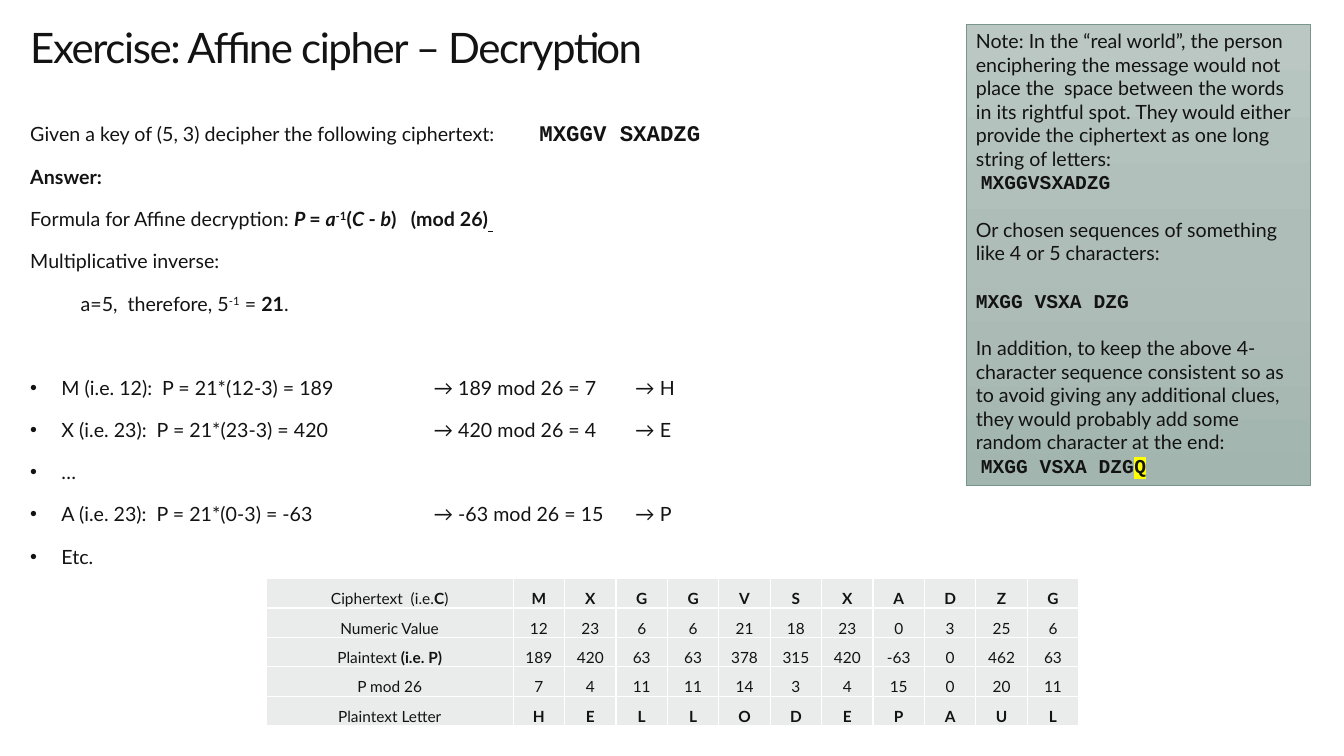
from copy import deepcopy
from dataclasses import dataclass

from pptx import Presentation
from pptx.dml.color import RGBColor
from pptx.enum.shapes import MSO_SHAPE
from pptx.enum.text import MSO_ANCHOR as Anchor, MSO_AUTO_SIZE as AutoSize, PP_ALIGN as Align
from pptx.oxml.ns import qn
from pptx.oxml.xmlchemy import OxmlElement as make_element
from pptx.util import Inches, Pt

INK, WHITE, CELL_FILL = "131313", "FFFFFF", "EAECEB"
SANS, MONO = "Lato", "Courier New"


@dataclass(frozen=True)
class Span:
    text: str
    bold: bool = False
    italic: bool = False
    underline: bool = False
    raised: bool = False
    font: str = SANS
    size: float = 14
    highlight: str = ""


@dataclass(frozen=True)
class Para:
    spans: tuple[Span, ...]
    before: float = 0
    tabs: tuple[float, ...] = ()
    bullet: bool = False


def colour(value: str) -> RGBColor:
    return RGBColor.from_string(value)


def add_child(parent, tag: str, **attributes):
    child = make_element(tag)
    for name, value in attributes.items():
        child.set(name, str(value))
    parent.append(child)
    return child


def write_span(para, span: Span) -> None:
    run = para.add_run()
    run.text = span.text
    font = run.font
    font.name, font.size, font.bold, font.italic = span.font, Pt(span.size), span.bold, span.italic
    font.underline = span.underline
    font.color.rgb = colour(INK)
    properties = run._r.get_or_add_rPr()
    if span.raised:
        properties.set("baseline", "30000")
    if span.highlight:
        mark = make_element("a:highlight")
        add_child(mark, "a:srgbClr", val=span.highlight)
        properties.find(qn("a:solidFill")).addnext(mark)


def write_paras(frame, paras: list[Para], line_spacing: float = 1.0) -> None:
    for index, item in enumerate(paras):
        para = frame.paragraphs[0] if index == 0 else frame.add_paragraph()
        para.alignment = Align.LEFT
        para.line_spacing = line_spacing
        para.space_before, para.space_after = Pt(item.before), Pt(0)
        properties = para._p.get_or_add_pPr()
        hang = Inches(0.31) if item.bullet else 0
        properties.set("marL", str(hang))
        properties.set("indent", str(-hang))
        if item.bullet:
            add_child(properties, "a:buFont", typeface="Arial")
            add_child(properties, "a:buChar", char="•")
        else:
            add_child(properties, "a:buNone")
        if item.tabs:
            stops = add_child(properties, "a:tabLst")
            for stop in item.tabs:
                add_child(stops, "a:tab", pos=Inches(stop), algn="l")
        for span in item.spans:
            write_span(para, span)


def place(shape, left: float, top: float, width: float, height: float) -> None:
    shape.left, shape.top = Inches(left), Inches(top)
    shape.width, shape.height = Inches(width), Inches(height)


def format_cell(cell, spans: tuple[Span, ...]) -> None:
    cell.margin_left = cell.margin_right = cell.margin_top = Inches(0.01)
    cell.margin_bottom = 0
    cell.vertical_anchor = Anchor.BOTTOM
    properties = cell._tc.get_or_add_tcPr()
    for side in ("L", "R", "T", "B"):
        border = add_child(properties, f"a:ln{side}", w=Pt(1))
        add_child(add_child(border, "a:solidFill"), "a:srgbClr", val=WHITE)
    cell.fill.solid()
    cell.fill.fore_color.rgb = colour(CELL_FILL)
    para = cell.text_frame.paragraphs[0]
    para.alignment = Align.CENTER
    for span in spans:
        write_span(para, span)


def add_title(page) -> None:
    title = page.shapes.title
    place(title, 0.2, 0.24, 11.85, 0.68)
    frame = title.text_frame
    frame.vertical_anchor, frame.auto_size = Anchor.TOP, AutoSize.NONE
    write_paras(frame, [Para((Span("Exercise: Affine cipher – Decryption", size=30),))], 0.85)
    frame.paragraphs[0].runs[0]._r.get_or_add_rPr().set("spc", "-100")


def add_body(page) -> None:
    body = page.placeholders[1]
    place(body, 0.2, 1.08, 12.55, 5.97)
    body.text_frame.vertical_anchor = Anchor.TOP
    body.text_frame.auto_size = AutoSize.NONE
    formula = (
        Span("Formula for Affine decryption: "),
        Span("P ", bold=True, italic=True), Span("= ", bold=True),
        Span("a", bold=True, italic=True), Span("-1", bold=True, raised=True),
        Span("(", bold=True), Span("C ", bold=True, italic=True), Span("- ", bold=True),
        Span("b", bold=True, italic=True), Span(")   (mod 26)", bold=True),
        Span(" ", underline=True),
    )
    inverse = (Span("\ta=5,  therefore, 5"), Span("-1", raised=True), Span(" = "),
               Span("21", bold=True), Span("."))
    steps = [
        "M (i.e. 12):  P = 21*(12-3) = 189\t→ 189 mod 26 = 7\t→ H",
        "X (i.e. 23):  P = 21*(23-3) = 420\t→ 420 mod 26 = 4\t→ E",
        "…",
        "A (i.e. 23):  P = 21*(0-3) = -63\t→ -63 mod 26 = 15\t→ P",
        "Etc.",
    ]
    paras = [
        Para((Span("Given a key of (5, 3) decipher the following ciphertext:\t "),
              Span("MXGGV SXADZG", bold=True, font=MONO, size=16)), tabs=(5,)),
        Para((Span("Answer:", bold=True),), 10),
        Para(formula, 10),
        Para((Span("Multiplicative inverse:"),), 10),
        Para(inverse, 10, tabs=(1,)),
    ]
    paras += [Para((Span(step),), 10 if index else 40, (4, 6), True)
              for index, step in enumerate(steps)]
    write_paras(body.text_frame, paras, 1.2)


def add_cipher_table(page) -> None:
    ciphertext = "MXGGVSXADZG"
    numbers = [ord(letter) - ord("A") for letter in ciphertext]
    products = [21 * (number - 3) for number in numbers]
    remainders = [product % 26 for product in products]
    plaintext = [chr(ord("A") + remainder) for remainder in remainders]
    rows = [
        ((Span("Ciphertext  (i.e.", size=11), Span("C", bold=True, size=11), Span(")", size=11)),
         ciphertext, True),
        ((Span("Numeric Value", size=11),), numbers, False),
        ((Span("Plaintext ", size=11), Span("(i.e. P)", bold=True, size=11)), products, False),
        ((Span("P mod 26", size=11),), remainders, False),
        ((Span("Plaintext Letter", size=11),), plaintext, True),
    ]
    table = page.shapes.add_table(len(rows), len(ciphertext) + 1, Inches(2.64), Inches(5.74),
                                  Inches(8.05), Inches(1.46)).table
    table.first_row = table.horz_banding = False
    for index, column in enumerate(table.columns):
        column.width = Inches(0.51 if index else 2.45)
    for row, (label, values, bold) in enumerate(rows):
        format_cell(table.cell(row, 0), label)
        for column, value in enumerate(values, 1):
            format_cell(table.cell(row, column), (Span(str(value), bold=bold, size=11),))


def add_note(page) -> None:
    note = page.shapes.add_shape(MSO_SHAPE.RECTANGLE, Inches(9.58), Inches(0.24),
                                 Inches(3.42), Inches(4.58))
    note.shadow.inherit = False
    note.line.color.rgb = colour("79958B")
    note.line.width = Pt(0.5)
    note.fill.gradient()
    note.fill.gradient_angle = 270
    stop_list = note._element.spPr.find(qn("a:gradFill")).find(qn("a:gsLst"))
    stop_list.insert(1, deepcopy(stop_list[0]))
    shades = ((0, "BAC7C2"), (0.5, "AFBDB8"), (1, "A2B5AE"))
    for stop, (position, shade) in zip(note.fill.gradient_stops, shades):
        stop.position = position
        stop.color.rgb = colour(shade)
    frame = note.text_frame
    frame.word_wrap, frame.vertical_anchor = True, Anchor.TOP
    frame.auto_size = AutoSize.SHAPE_TO_FIT_TEXT
    write_paras(frame, [
        Para((Span("Note: In the “real world”, the person enciphering the message would not place "
                   "the  space between the words in its rightful spot. They would either provide "
                   "the ciphertext as one long string of letters:"),)),
        Para((Span(" "), Span("MXGGVSXADZG", bold=True, font=MONO))),
        Para((Span("Or chosen sequences of something like 4 or 5 characters:"),), 17),
        Para((Span("MXGG VSXA DZG", bold=True, font=MONO),), 17),
        Para((Span("In addition, to keep the above 4-character sequence consistent so as to avoid "
                   "giving any additional clues, they would probably add some random character "
                   "at the end:"),), 17),
        Para((Span(" "), Span("MXGG VSXA DZG", bold=True, font=MONO),
              Span("Q", bold=True, font=MONO, highlight="FFFF00"))),
    ])


def main() -> None:
    deck = Presentation()
    deck.slide_width, deck.slide_height = Inches(13.33), Inches(7.5)
    page = deck.slides.add_slide(deck.slide_layouts[1])
    add_title(page)
    add_body(page)
    add_cipher_table(page)
    add_note(page)
    deck.save("out.pptx")


if __name__ == "__main__":
    main()
